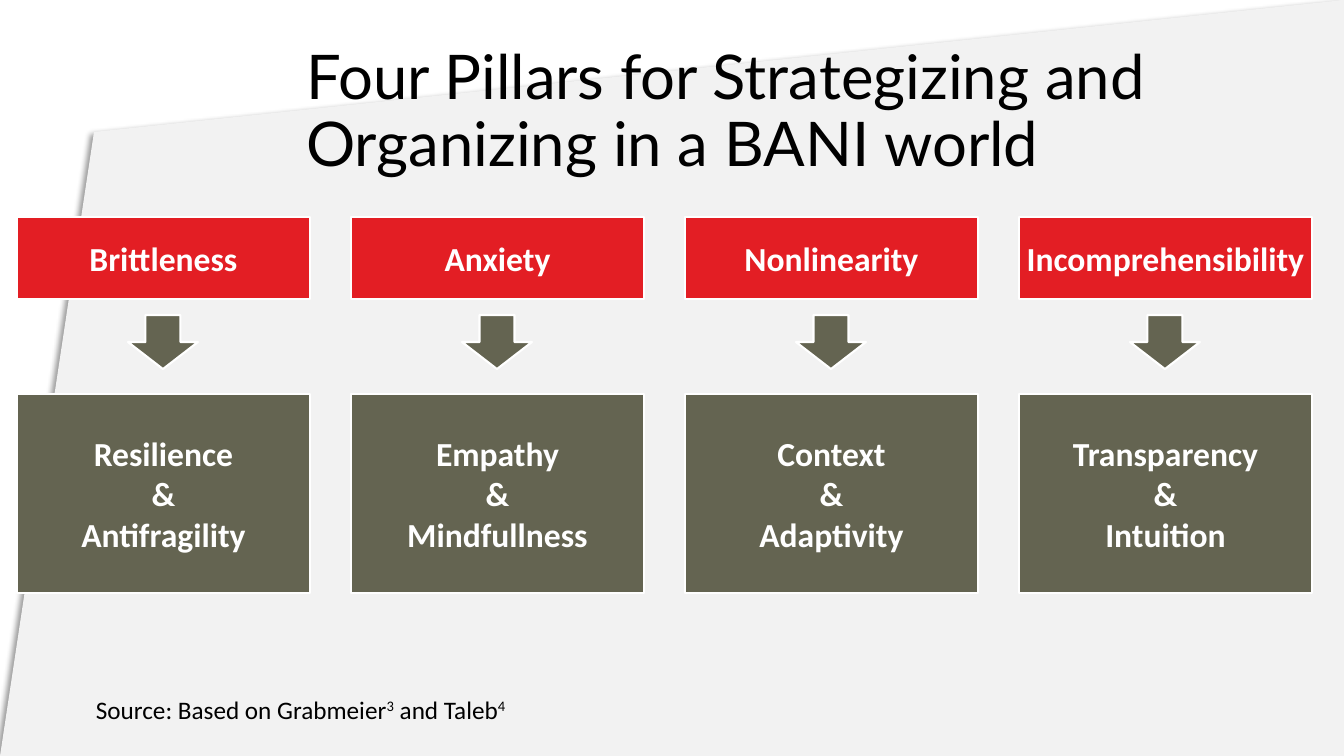
from lxml import etree
from pptx import Presentation
from pptx.dml.color import RGBColor
from pptx.enum.shapes import MSO_SHAPE
from pptx.enum.text import MSO_ANCHOR, MSO_AUTO_SIZE, PP_ALIGN
from pptx.oxml.ns import qn
from pptx.util import Pt

RECTANGLE, DOWN_ARROW = MSO_SHAPE.RECTANGLE, MSO_SHAPE.DOWN_ARROW
MIDDLE = MSO_ANCHOR.MIDDLE
LEFT, CENTER = PP_ALIGN.LEFT, PP_ALIGN.CENTER
FIXED, GROW = MSO_AUTO_SIZE.NONE, MSO_AUTO_SIZE.SHAPE_TO_FIT_TEXT

BLACK = RGBColor(0x00, 0x00, 0x00)
WHITE = RGBColor(0xFF, 0xFF, 0xFF)
PALE_GREY = RGBColor(0xF2, 0xF2, 0xF2)
RED = RGBColor(0xE3, 0x1E, 0x24)
OLIVE = RGBColor(0x64, 0x64, 0x51)

EMU_PER_PX = 914400 / 100.8
SLIDE_WIDTH, SLIDE_HEIGHT = 1344, 756
TITLE_ONLY = 5

TITLE_FONT = {"name": "Lato", "size": Pt(44), "bold": False}
LABEL_FONT = {"name": "Calibri", "size": Pt(24), "bold": True}
SOURCE_FONT = {"name": "Calibri", "size": Pt(18), "bold": False}

COLUMN_LEFT, COLUMN_PITCH, COLUMN_WIDTH = 17, 334, 293
ARROW_WIDTH = 70
PILLARS = [
    ("Brittleness", ["Resilience", "&", "Antifragility"]),
    ("Anxiety", ["Empathy", "&", "Mindfullness"]),
    ("Nonlinearity", ["Context", "&", "Adaptivity"]),
    ("Incomprehensibility", ["Transparency", "&", "Intuition"]),
]


def px(*lengths):
    """Turn pixel lengths into EMU."""
    return [round(length * EMU_PER_PX) for length in lengths]


def set_font(font, values, color):
    for name, value in values.items():
        setattr(font, name, value)
    font.color.rgb = color


class PillarSlide:
    def __init__(self, deck):
        self.slide = deck.slides.add_slide(deck.slide_layouts[TITLE_ONLY])
        self.shapes = self.slide.shapes

    def backdrop(self, points):
        """Draw the slanted sheet behind the title, with a soft shadow."""
        builder = self.shapes.build_freeform(*points[0], scale=EMU_PER_PX)
        builder.add_line_segments(points[1:], close=True)
        sheet = builder.convert_to_shape()
        sheet.fill.solid()
        sheet.fill.fore_color.rgb = PALE_GREY
        sheet.line.fill.background()
        sheet.shadow.inherit = False
        effects = sheet.element.spPr.find(qn("a:effectLst"))
        shadow = etree.SubElement(effects, qn("a:outerShdw"), blurRad="50800",
                                  dist="38100", dir="8100000", algn="tr", rotWithShape="0")
        color = etree.SubElement(shadow, qn("a:srgbClr"), val="000000")
        etree.SubElement(color, qn("a:alpha"), val="40000")
        self.shapes.title.element.addprevious(sheet.element)

    def title(self, text, left, top, width, height):
        title = self.shapes.title
        title.left, title.top, title.width, title.height = px(left, top, width, height)
        frame = title.text_frame
        frame.text = text
        frame.auto_size = FIXED
        frame.vertical_anchor = MIDDLE
        para = frame.paragraphs[0]
        para.alignment = LEFT
        para.line_spacing = 0.9
        set_font(para.runs[0].font, TITLE_FONT, BLACK)

    def block(self, kind, color, left, top, width, height, lines=()):
        block = self.shapes.add_shape(kind, *px(left, top, width, height))
        block.shadow.inherit = False
        block.fill.solid()
        block.fill.fore_color.rgb = color
        block.line.color.rgb = WHITE
        block.line.width = Pt(1.5)
        if not lines:
            return
        frame = block.text_frame
        frame.word_wrap = False
        frame.vertical_anchor = MIDDLE
        frame.text = "\n".join(lines)
        for para in frame.paragraphs:
            para.alignment = CENTER
            set_font(para.runs[0].font, LABEL_FONT, WHITE)

    def source(self, parts, left, top, width, height):
        """Write (text, is_superscript) parts on one line."""
        box = self.shapes.add_textbox(*px(left, top, width, height))
        frame = box.text_frame
        frame.word_wrap = False
        frame.auto_size = GROW
        para = frame.paragraphs[0]
        for text, is_superscript in parts:
            span = para.add_run()
            span.text = text
            set_font(span.font, SOURCE_FONT, BLACK)
            if is_superscript:
                span._r.get_or_add_rPr().set("baseline", "30000")


def main():
    deck = Presentation()
    deck.slide_width, deck.slide_height = px(SLIDE_WIDTH, SLIDE_HEIGHT)
    page = PillarSlide(deck)
    page.backdrop([(94, 132), (SLIDE_WIDTH, 0), (SLIDE_WIDTH, SLIDE_HEIGHT),
                   (0, SLIDE_HEIGHT)])
    page.title("Four Pillars for Strategizing and Organizing in a BANI world",
               296, 40, 956, 146)
    for column, (challenge, response) in enumerate(PILLARS):
        left = COLUMN_LEFT + column * COLUMN_PITCH
        arrow_left = left + (COLUMN_WIDTH - ARROW_WIDTH) // 2
        page.block(RECTANGLE, RED, left, 217, COLUMN_WIDTH, 82, [challenge])
        page.block(RECTANGLE, OLIVE, left, 394, COLUMN_WIDTH, 199, response)
        page.block(DOWN_ARROW, OLIVE, arrow_left, 315, ARROW_WIDTH, 54)
    page.source([("Source: Based on Grabmeier", False), ("3", True),
                 (" and Taleb", False), ("4", True)], 86, 689, 452, 40)
    deck.save("out.pptx")


if __name__ == "__main__":
    main()
